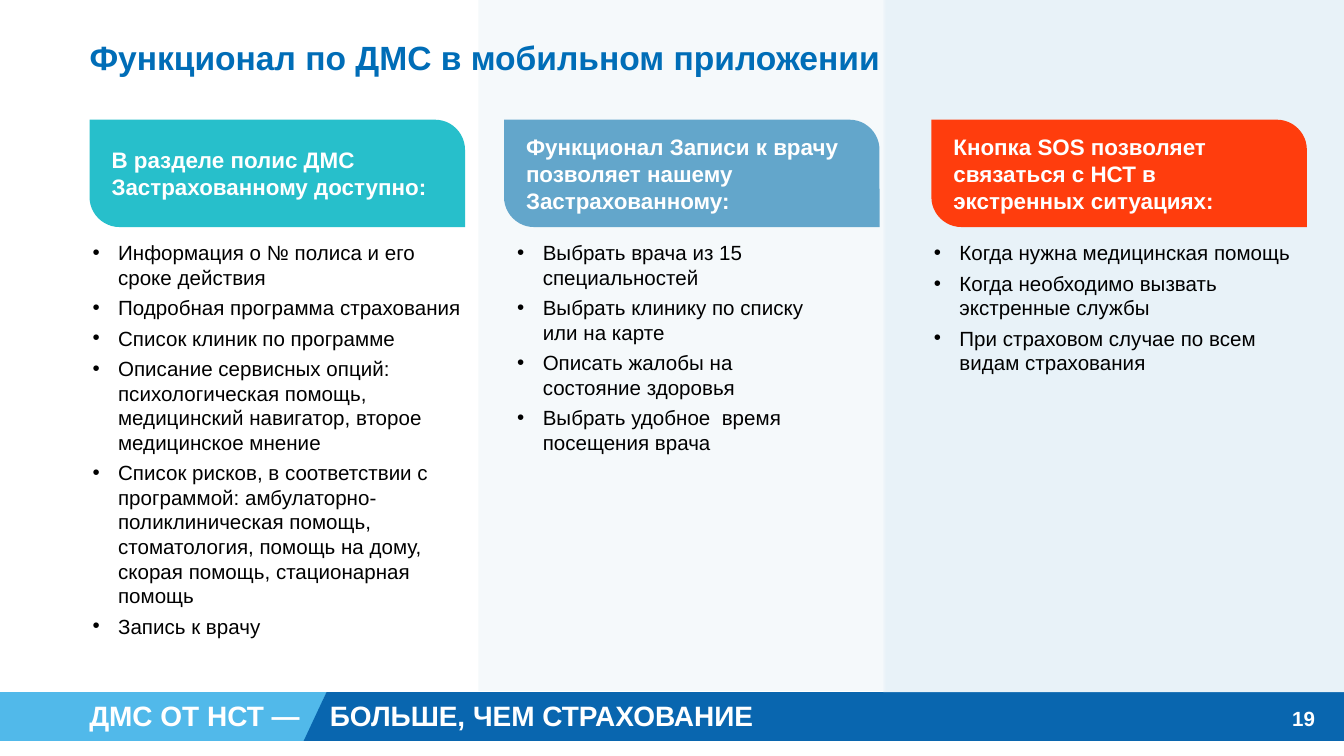
from lxml import etree
from pptx import Presentation
from pptx.dml.color import RGBColor
from pptx.enum.shapes import MSO_SHAPE
from pptx.enum.text import MSO_ANCHOR, MSO_AUTO_SIZE, PP_ALIGN
from pptx.oxml.ns import qn
from pptx.util import Inches, Pt

CARD = MSO_SHAPE.ROUND_2_DIAG_RECTANGLE
MIDDLE = MSO_ANCHOR.MIDDLE
LEFT = PP_ALIGN.LEFT
CENTER = PP_ALIGN.CENTER
FIXED = MSO_AUTO_SIZE.NONE

COLORS = {
    "title": "006DB7", "white": "FFFFFF", "body": "000000",
    "footer_light": "51B9EA", "footer_dark": "0966AF",
    "band_right": "E8F2F8", "band_middle": "F0F6FA",
    "policy": "27BFCB", "doctor": "63A6CB", "sos": "FF3D0D",
}

prs = Presentation()
prs.slide_width = Inches(10)
prs.slide_height = prs.slide_width * 9 // 16
column = prs.slide_width / 100
row = prs.slide_height / 100
slide = prs.slides.add_slide(prs.slide_layouts[5])
shapes = slide.shapes


def place(left, top, width, height):
    return (round(left * column), round(top * row),
            round(width * column), round(height * row))


def style(frame, size, color, bold=False):
    frame.word_wrap = True
    frame.auto_size = FIXED
    for paragraph in frame.paragraphs:
        paragraph.alignment = LEFT
        for run in paragraph.runs:
            run.font.name = "Arial"
            run.font.size = Pt(size)
            run.font.bold = bold
            run.font.color.rgb = RGBColor.from_string(COLORS[color])


footer_top, footer_height = 91.56, 6.45
footer_bottom = footer_top + footer_height
footer_parts = [
    ("footer_light", (0, 24.3, 22.7, 0)),
    ("footer_dark", (24.3, 100, 100, 22.6)),
]
for color, (top_left, top_right, bottom_right, bottom_left) in footer_parts:
    outline = shapes.build_freeform(round(top_left * column), round(footer_top * row))
    outline.add_line_segments([
        (round(x * column), round(y * row)) for x, y in [
            (top_right, footer_top), (bottom_right, footer_bottom),
            (bottom_left, footer_bottom)]
    ])
    stripe = outline.convert_to_shape()
    stripe.shadow.inherit = False
    stripe.fill.solid()
    stripe.fill.fore_color.rgb = RGBColor.from_string(COLORS[color])
    stripe.line.fill.background()

slogan = shapes.add_textbox(*place(5.66, footer_top, 63, 6.2))
slogan.text_frame.text = "ДМС ОТ НСТ —\tБОЛЬШЕ, ЧЕМ СТРАХОВАНИЕ"
slogan_properties = slogan.text_frame.paragraphs[0]._p.get_or_add_pPr()
tab_stops = etree.SubElement(slogan_properties, qn("a:tabLst"))
etree.SubElement(tab_stops, qn("a:tab"), pos=str(Inches(1.79)), algn="l")
style(slogan.text_frame, 15, "white", True)

bands = [
    ("band_right", 65.74, 34.26, 91.56, 100),
    ("band_middle", 35.6, 30.3, 91.4, 66),
]
for color, left, width, height, opacity in bands:
    band = shapes.add_shape(CARD, *place(left, 0, width, height))
    band.adjustments[0] = 0
    band.adjustments[1] = 0
    band.shadow.inherit = False
    band.fill.solid()
    band.fill.fore_color.rgb = RGBColor.from_string(COLORS[color])
    band.line.fill.background()
    if opacity < 100:
        tint = band.fill._xPr.find(".//" + qn("a:srgbClr"))
        etree.SubElement(tint, qn("a:alpha"), val=str(opacity * 1000))

title = shapes.title
title.left, title.top, title.width, title.height = place(5.66, 5.16, 80.4, 4.8)
title.text_frame.text = "Функционал по ДМС в мобильном приложении"
title.text_frame.vertical_anchor = MIDDLE
style(title.text_frame, 18, "title", True)
title.element.getparent().append(title.element)

page_number = shapes.add_textbox(*place(95.2, 93.33, 3.6, 3.4))
number_frame = page_number.text_frame
number_frame.text = "19"
number_frame.margin_left = number_frame.margin_right = 0
number_frame.margin_top = number_frame.margin_bottom = 0
number_frame.vertical_anchor = MIDDLE
style(number_frame, 11, "white", True)
number_frame.paragraphs[0].alignment = CENTER

sections = [
    ("policy", 6.66, "В разделе полис ДМС \vЗастрахованному доступно:", 5.9, 30.1, 54.9, [
        "Информация о № полиса и его сроке действия",
        "Подробная программа страхования",
        "Список клиник по программе",
        "Описание сервисных опций: психологическая помощь, медицинский навигатор, "
        "второе медицинское мнение",
        "Список рисков, в соответствии с программой: амбулаторно-поликлиническая помощь, "
        "стоматология, помощь на дому, скорая помощь, стационарная помощь",
        "Запись к врачу",
    ]),
    ("doctor", 37.5, "Функционал Записи к врачу позволяет нашему Застрахованному:", 37.5, 25.2, 30.4, [
        "Выбрать врача из 15 специальностей",
        "Выбрать клинику по списку или на карте",
        "Описать жалобы на состояние здоровья",
        "Выбрать удобное  время посещения врача",
    ]),
    ("sos", 69.3, "Кнопка SOS позволяет связаться с НСТ в экстренных ситуациях:", 68.5, 30.1, 19.7, [
        "Когда нужна медицинская помощь",
        "Когда необходимо вызвать экстренные службы",
        "При страховом случае по всем видам страхования",
    ]),
]
for color, card_left, heading, list_left, list_width, list_height, items in sections:
    card = shapes.add_shape(CARD, *place(card_left, 15.83, 27.94, 14.2))
    card.adjustments[0] = 0
    card.adjustments[1] = 0.28
    card.shadow.inherit = False
    card.fill.solid()
    card.fill.fore_color.rgb = RGBColor.from_string(COLORS[color])
    card.line.fill.background()
    card.text_frame.text = heading
    card.text_frame.vertical_anchor = MIDDLE
    style(card.text_frame, 12, "white", True)

    features = shapes.add_textbox(*place(list_left, 30.93, list_width, list_height))
    features.text_frame.text = "\n".join(items)
    for item in features.text_frame.paragraphs:
        properties = item._p.get_or_add_pPr()
        properties.set("marL", str(Inches(0.19)))
        properties.set("indent", str(-Inches(0.19)))
        etree.SubElement(properties, qn("a:buFont"), typeface="Arial")
        etree.SubElement(properties, qn("a:buChar"), char="•")
        item.space_after = Pt(3)
    style(features.text_frame, 11, "body")

prs.save("out.pptx")
